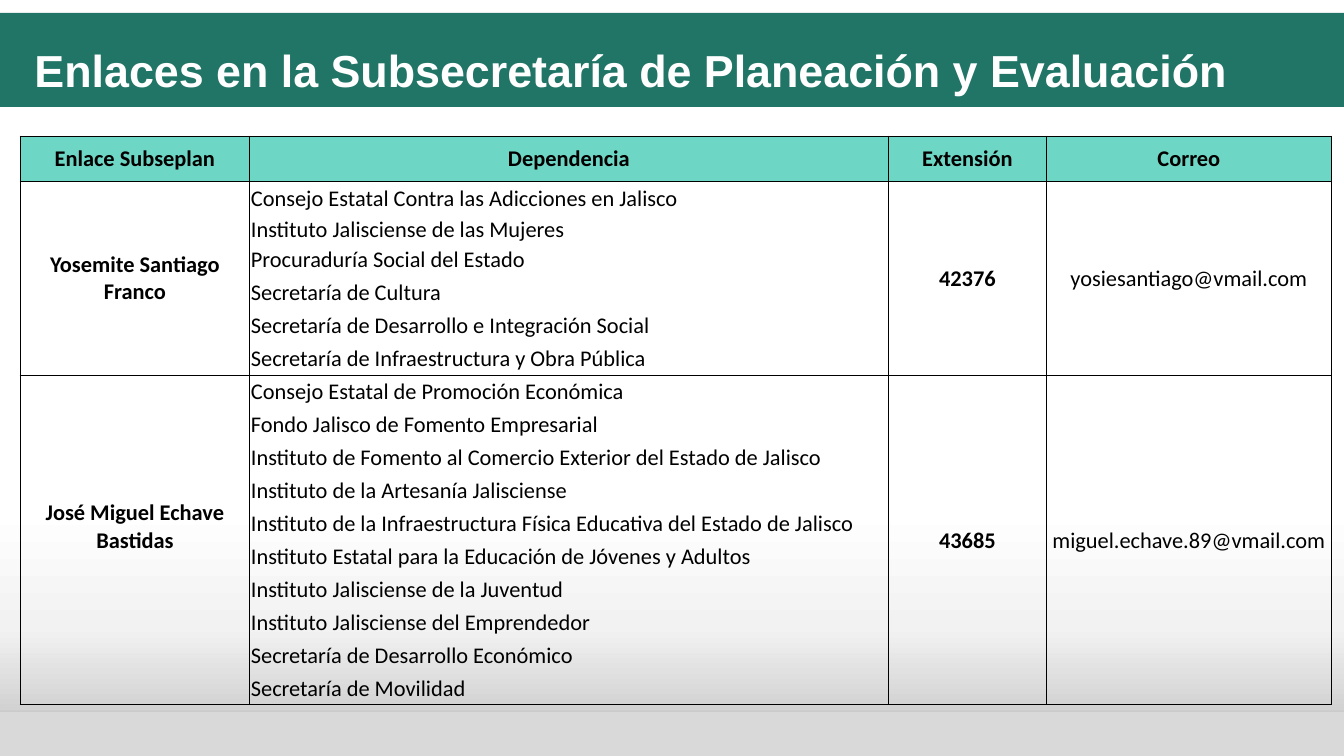
"""Build the slide listing the liaisons of the planning office."""
from lxml.etree import SubElement
from pptx import Presentation
from pptx.dml.color import RGBColor
from pptx.enum.shapes import MSO_SHAPE
from pptx.enum.text import MSO_ANCHOR, MSO_AUTO_SIZE, PP_ALIGN
from pptx.oxml import parse_xml
from pptx.oxml.ns import nsdecls, qn
from pptx.util import Pt

SCALE = 9144000 / 1344


def px(length):
    return round(length * SCALE)


def color(value):
    return RGBColor.from_string(value)


presentation = Presentation()
presentation.slide_width = px(1344)
presentation.slide_height = px(756)
slide = presentation.slides.add_slide(presentation.slide_layouts[5])

bands = {}
for name, top, height, fill in [
    ("fade", 261, 495, "FFFFFF"),
    ("footer", 712, 44, "D9D9D9"),
    ("header", 13, 94, "217567"),
]:
    shape = slide.shapes.add_shape(MSO_SHAPE.RECTANGLE, 0, px(top), px(1344), px(height))
    shape.shadow.inherit = False
    shape.fill.solid()
    shape.fill.fore_color.rgb = color(fill)
    shape.line.fill.background()
    bands[name] = shape

stops = "".join(
    f'<a:gs pos="{position * 1000}"><a:srgbClr val="{value}"/></a:gs>'
    for position, value in [(50, "FFFFFF"), (74, "F2F2F2"), (100, "BFBFBF")]
)
fade_properties = bands["fade"].element.spPr
fade_properties.replace(
    fade_properties.find(qn("a:solidFill")),
    parse_xml(
        f'<a:gradFill {nsdecls("a")}><a:gsLst>{stops}</a:gsLst>'
        '<a:lin ang="5400000" scaled="0"/></a:gradFill>'
    ),
)
bands["footer"].element.spPr.find(qn("a:effectLst")).append(
    parse_xml(
        f'<a:outerShdw {nsdecls("a")} blurRad="{Pt(3.1)}" dist="{Pt(1.8)}" dir="5400000">'
        '<a:srgbClr val="000000"><a:alpha val="35000"/></a:srgbClr></a:outerShdw>'
    )
)

title = slide.shapes.title
title.element.getparent().append(title.element)
title_place = {"left": 21, "top": 24, "width": 1262, "height": 92}
for attribute, value in title_place.items():
    setattr(title, attribute, px(value))
title.text_frame.text = "Enlaces en la Subsecretaría de Planeación y Evaluación"
title.text_frame.auto_size = MSO_AUTO_SIZE.NONE
title.text_frame.vertical_anchor = MSO_ANCHOR.MIDDLE
paragraph = title.text_frame.paragraphs[0]
paragraph.alignment = PP_ALIGN.LEFT
title_font = {"name": "Arial", "size": Pt(24), "bold": True}
for attribute, value in title_font.items():
    setattr(paragraph.font, attribute, value)
paragraph.font.color.rgb = color("FFFFFF")

headings = ["Enlace Subseplan", "Dependencia", "Extensión", "Correo"]
liaisons = [
    ("Yosemite Santiago Franco", "42376", "yosiesantiago@vmail.com", [
        "Consejo Estatal Contra las Adicciones en Jalisco",
        "Instituto Jalisciense de las Mujeres",
        "Procuraduría Social del Estado",
        "Secretaría de Cultura",
        "Secretaría de Desarrollo e Integración Social",
        "Secretaría de Infraestructura y Obra Pública",
    ]),
    ("José Miguel Echave Bastidas", "43685", "miguel.echave.89@vmail.com", [
        "Consejo Estatal de Promoción Económica",
        "Fondo Jalisco de Fomento Empresarial",
        "Instituto de Fomento al Comercio Exterior del Estado de Jalisco",
        "Instituto de la Artesanía Jalisciense",
        "Instituto de la Infraestructura Física Educativa del Estado de Jalisco",
        "Instituto Estatal para la Educación de Jóvenes y Adultos",
        "Instituto Jalisciense de la Juventud",
        "Instituto Jalisciense del Emprendedor",
        "Secretaría de Desarrollo Económico",
        "Secretaría de Movilidad",
    ]),
]

rows = [headings]
groups = []
for person, extension, email, agencies in liaisons:
    groups.append((len(rows), len(rows) + len(agencies) - 1))
    rows.append([person, agencies[0], extension, email])
    rows.extend([None, agency, None, None] for agency in agencies[1:])
group_tops = {0} | {first for first, last in groups}
group_bottoms = {0} | {last for first, last in groups}

column_widths = [229, 639, 158, 285]
row_heights = [45, 34, 28] + [33] * (len(rows) - 3)
table = slide.shapes.add_table(
    len(rows), len(headings), px(20), px(136), px(sum(column_widths)), px(sum(row_heights))
).table
table.first_row = False
table.horz_banding = False
for column, width in zip(table.columns, column_widths):
    column.width = px(width)
for row, height in zip(table.rows, row_heights):
    row.height = px(height)

cell_format = {
    "margin_left": px(2),
    "margin_right": px(1),
    "margin_top": px(1),
    "margin_bottom": 0,
    "vertical_anchor": MSO_ANCHOR.MIDDLE,
}
for row_index, texts in enumerate(rows):
    for column_index, text in enumerate(texts):
        cell = table.cell(row_index, column_index)
        is_agency = row_index > 0 and column_index == 1
        borders = {
            "lnL": True,
            "lnR": True,
            "lnT": not is_agency or row_index in group_tops,
            "lnB": not is_agency or row_index in group_bottoms,
        }
        properties = cell._tc.get_or_add_tcPr()
        for tag, visible in borders.items():
            line = SubElement(properties, qn(f"a:{tag}"), w=str(Pt(0.5)))
            if visible:
                solid = SubElement(line, qn("a:solidFill"))
                SubElement(solid, qn("a:srgbClr"), val="000000")
            else:
                SubElement(line, qn("a:noFill"))
        if row_index == 0:
            cell.fill.solid()
            cell.fill.fore_color.rgb = color("6ED6C4")
        else:
            cell.fill.background()
        if text is None:
            continue

        cell.text = text
        for attribute, value in cell_format.items():
            setattr(cell, attribute, value)
        paragraph = cell.text_frame.paragraphs[0]
        paragraph.alignment = PP_ALIGN.LEFT if is_agency else PP_ALIGN.CENTER
        cell_font = {
            "name": "Calibri",
            "size": Pt(12),
            "bold": row_index == 0 or column_index in (0, 2),
        }
        for attribute, value in cell_font.items():
            setattr(paragraph.font, attribute, value)
        paragraph.font.color.rgb = color("000000")

for first, last in groups:
    for column_index in (0, 2, 3):
        table.cell(first, column_index).merge(table.cell(last, column_index))
last_group_top = groups[-1][0]
table.cell(last_group_top, 0).margin_bottom = px(27)

presentation.save("out.pptx")
